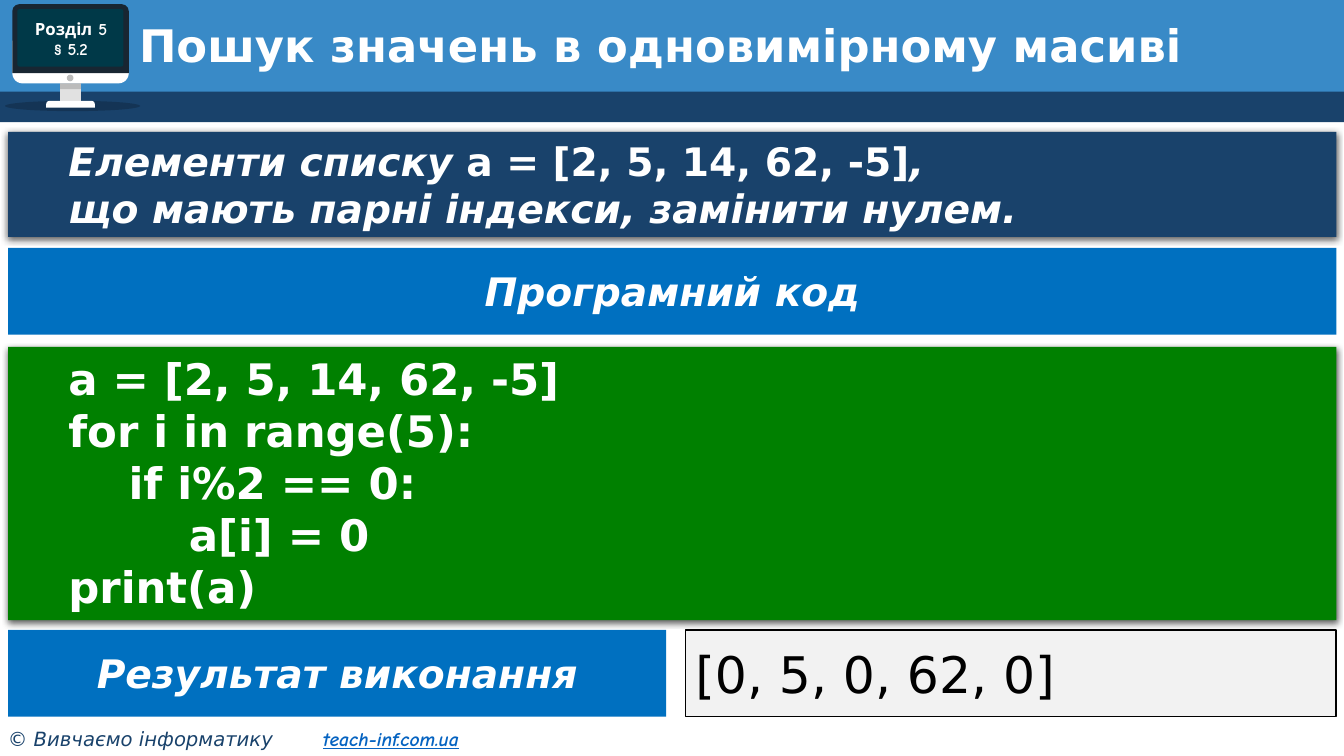
from dataclasses import dataclass

from lxml.etree import SubElement
from pptx import Presentation
from pptx.dml.color import RGBColor
from pptx.enum.shapes import MSO_SHAPE
from pptx.enum.text import MSO_ANCHOR, PP_ALIGN
from pptx.oxml.ns import qn
from pptx.util import Pt

MAIN_FONT, HAND_FONT = "DejaVu Sans", "Comic Neue"
NAVY, BLUE, WHITE, BLACK = "19426B", "0070C0", "FFFFFF", "000000"
MARGIN, FULL_WIDTH, LABEL_HEIGHT = 5.76, 948.9, 61.9
FIRST_LINE_INDENT = 36


@dataclass
class Part:
    """A plain preset shape, placed in points."""
    kind: MSO_SHAPE
    left: float
    top: float
    width: float
    height: float
    fill: str
    adjustments: tuple[float, ...] = ()
    opacity: int = 100


@dataclass
class TextStyle:
    size: float
    color: str = WHITE
    bold: bool = True
    italic: bool | None = None
    font: str = MAIN_FONT
    align: PP_ALIGN = PP_ALIGN.LEFT
    anchor: MSO_ANCHOR = MSO_ANCHOR.MIDDLE
    indent: float = 0
    line_spacing: float | None = None


@dataclass
class Panel:
    """A rectangle with text; each line is a list of (text, italic) runs."""
    left: float
    top: float
    width: float
    height: float
    fill: str
    style: TextStyle
    lines: list[list[tuple[str, bool | None]]]
    shadow: bool = False
    line: str | None = None


def rgb(color: str) -> RGBColor:
    return RGBColor.from_string(color)


def draw_part(slide, part: Part):
    shape = slide.shapes.add_shape(part.kind, Pt(part.left), Pt(part.top),
                                   Pt(part.width), Pt(part.height))
    shape.shadow.inherit = False
    shape.fill.solid()
    shape.fill.fore_color.rgb = rgb(part.fill)
    shape.line.fill.background()
    for index, value in enumerate(part.adjustments):
        shape.adjustments[index] = value
    if part.opacity < 100:
        color = shape.fill._xPr.find(qn("a:solidFill"))[0]
        SubElement(color, qn("a:alpha"), val=str(part.opacity * 1000))
    return shape


def add_shadow(shape) -> None:
    effects = shape._element.spPr.find(qn("a:effectLst"))
    outer = SubElement(effects, qn("a:outerShdw"), blurRad=str(Pt(4.5)),
                       dist=str(Pt(1.5)), dir="5400000", algn="t", rotWithShape="0")
    color = SubElement(outer, qn("a:srgbClr"), val=BLACK)
    SubElement(color, qn("a:alpha"), val="63000")


def write_lines(text_frame, style: TextStyle, lines) -> None:
    text_frame.word_wrap = True
    text_frame.vertical_anchor = style.anchor
    for index, line in enumerate(lines):
        paragraph = text_frame.add_paragraph() if index else text_frame.paragraphs[0]
        paragraph.alignment = style.align
        if style.line_spacing:
            paragraph.line_spacing = style.line_spacing
        if style.indent:
            properties = paragraph._p.get_or_add_pPr()
            properties.set("marL", "0")
            properties.set("indent", str(Pt(style.indent)))
        font = paragraph.font
        font.name, font.size = style.font, Pt(style.size)
        font.bold, font.italic = style.bold, style.italic
        font.color.rgb = rgb(style.color)
        for text, italic in line:
            run = paragraph.add_run()
            run.text = text
            if italic is not None:
                run.font.italic = italic


def draw_panel(slide, panel: Panel) -> None:
    shape = draw_part(slide, Part(MSO_SHAPE.RECTANGLE, panel.left, panel.top,
                                  panel.width, panel.height, panel.fill))
    if panel.shadow:
        add_shadow(shape)
    if panel.line:
        shape.line.color.rgb = rgb(panel.line)
        shape.line.width = Pt(1)
    write_lines(shape.text_frame, panel.style, panel.lines)


def add_text(slide, left: float, top: float, width: float, height: float,
             style: TextStyle, texts: list[str]):
    box = slide.shapes.add_textbox(Pt(left), Pt(top), Pt(width), Pt(height))
    write_lines(box.text_frame, style, [[(text, None)] for text in texts])
    return box


def draw_footer(slide) -> None:
    style = TextStyle(14, NAVY, bold=False, italic=True, anchor=MSO_ANCHOR.TOP)
    box = add_text(slide, -1.44, 515.5, 376.6, 24.5, style, ["© Вивчаємо інформатику\t"])
    paragraph = box.text_frame.paragraphs[0]
    tabs = SubElement(paragraph._p.get_or_add_pPr(), qn("a:tabLst"))
    SubElement(tabs, qn("a:tab"), pos=str(Pt(225)), algn="l")
    # Tab stops come before the default run properties
    tabs.getnext() if tabs.getnext() is not None else None
    default_run = paragraph._p.pPr.find(qn("a:defRPr"))
    default_run.addprevious(tabs)
    address = paragraph.add_run()
    address.text = "teach-inf.com.ua"
    address.font.name = HAND_FONT
    address.font.bold = True
    address.font.underline = True
    address.font.color.rgb = rgb(BLUE_LINK)


BLUE_LINK = "0563C1"

HEADER = [
    Part(MSO_SHAPE.RECTANGLE, 0, 0, 960, 65.5, "398AC7"),
    Part(MSO_SHAPE.RECTANGLE, 0, 62.8, 960, 24.5, NAVY),
]
HEADER[0], HEADER[1] = HEADER[1], HEADER[0]

MONITOR = [
    Part(MSO_SHAPE.OVAL, 3.6, 72, 96.5, 7.4, BLACK, opacity=20),
    Part(MSO_SHAPE.ROUND_2_SAME_RECTANGLE, 8.8, 29, 83.2, 30.6, WHITE, (0, 0.24)),
    Part(MSO_SHAPE.ROUND_2_SAME_RECTANGLE, 8.8, 3, 83.2, 49.3, "182632", (0.1, 0)),
    Part(MSO_SHAPE.RECTANGLE, 43, 59.6, 14.8, 12.4, "E1E1E1"),
    Part(MSO_SHAPE.RECTANGLE, 43, 59.6, 14.8, 4, "BBBBBB"),
    Part(MSO_SHAPE.ROUND_2_SAME_RECTANGLE, 33, 72, 34.8, 5, WHITE, (0.5, 0)),
    Part(MSO_SHAPE.OVAL, 47.7, 53.3, 4.8, 4.8, "BBBBBB"),
    Part(MSO_SHAPE.ROUNDED_RECTANGLE, 12.4, 6.6, 75.7, 41, "003948", (0.036,)),
]

LABEL = TextStyle(28, italic=True, align=PP_ALIGN.CENTER)
TASK = TextStyle(28, italic=True, align=PP_ALIGN.JUSTIFY, anchor=MSO_ANCHOR.TOP,
                 indent=FIRST_LINE_INDENT)
CODE = TextStyle(31, align=PP_ALIGN.JUSTIFY, anchor=MSO_ANCHOR.TOP,
                 indent=FIRST_LINE_INDENT)
CODE_LINES = ["a = [2, 5, 14, 62, -5]", "for i in range(5):", "    if i%2 == 0:",
              "        a[i] = 0", "print(a)"]

PANELS = [
    Panel(MARGIN, 94.3, FULL_WIDTH, 75, NAVY, TASK,
          [[("Елементи списку ", True), ("а = [2, 5, 14, 62, -5]", False), (",", True)],
           [("що мають парні індекси, замінити нулем.", True)]], shadow=True),
    Panel(MARGIN, 247.8, FULL_WIDTH, 195.1, "008000", CODE,
          [[(line, None)] for line in CODE_LINES], shadow=True),
    Panel(489.6, 450, 464.7, LABEL_HEIGHT, "F2F2F2", TextStyle(36, BLACK, bold=False),
          [[("[0, 5, 0, 62, 0]", None)]], line=BLACK),
    Panel(MARGIN, 177.1, FULL_WIDTH, LABEL_HEIGHT, BLUE, LABEL, [[("Програмний код", True)]]),
    Panel(MARGIN, 450, 470, LABEL_HEIGHT, BLUE, LABEL, [[("Результат виконання", True)]]),
]


def main() -> None:
    presentation = Presentation()
    presentation.slide_width, presentation.slide_height = Pt(960), Pt(540)
    slide = presentation.slides.add_slide(presentation.slide_layouts[6])

    # Header bands, monitor and heading
    for part in HEADER + MONITOR:
        draw_part(slide, part)
    section = TextStyle(12, font=HAND_FONT, align=PP_ALIGN.CENTER)
    add_text(slide, 9.4, 6.5, 82.8, 42.5, section, ["Розділ 5", "§ 5.2"])
    add_text(slide, 92.2, 13, 843.8, 41.8, TextStyle(32, line_spacing=0.9),
             ["Пошук значень в одновимірному масиві"])

    # Task, code and result
    for panel in PANELS:
        draw_panel(slide, panel)

    draw_footer(slide)
    presentation.save("out.pptx")


if __name__ == "__main__":
    main()
